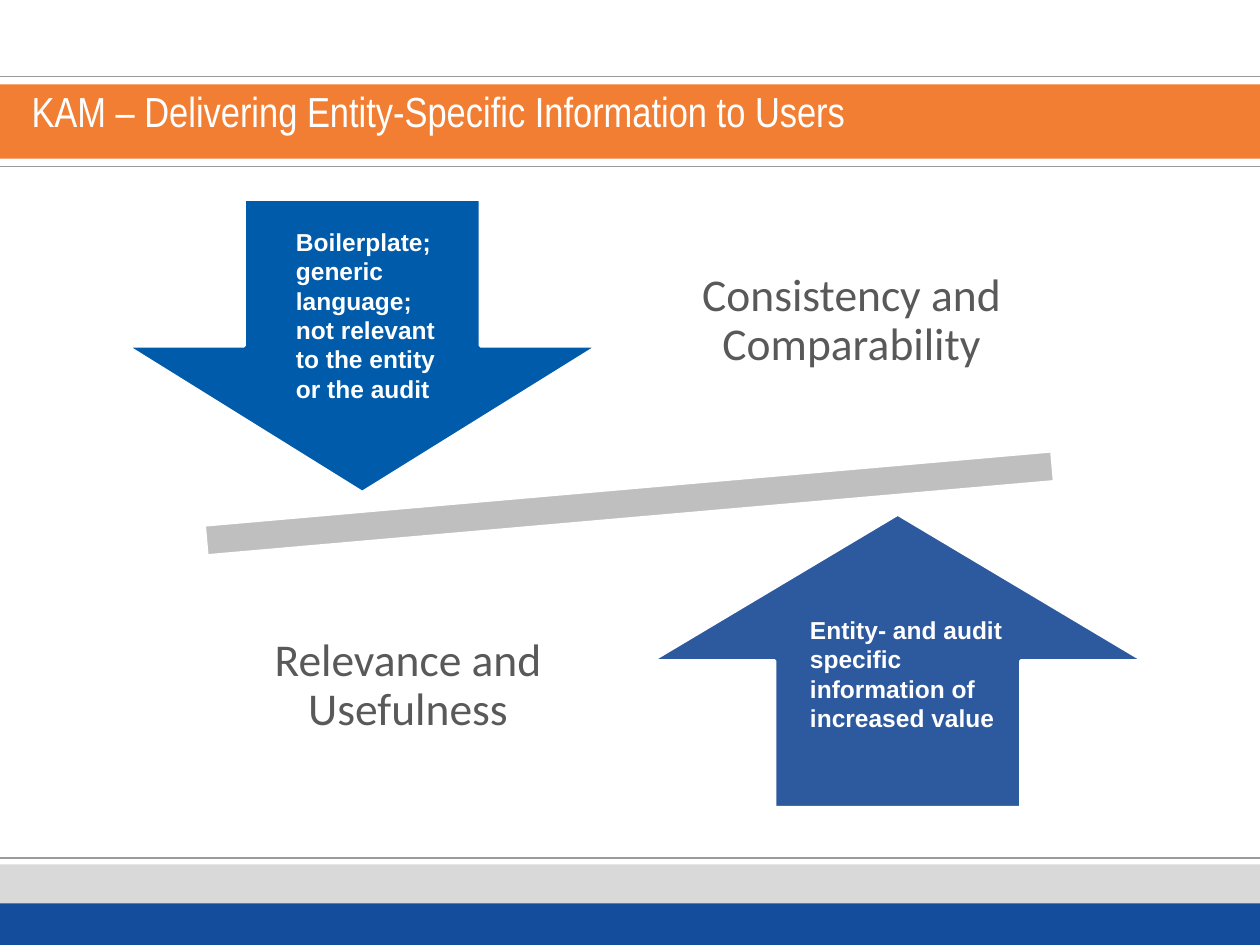
from pptx import Presentation
from pptx import util as u
from pptx.dml.color import RGBColor
from pptx.enum import shapes, text
from lxml import etree

WIDTH, HEIGHT = 10, 7.5
KIND = shapes.MSO_SHAPE
WHITE, LABEL_GREY, RULE_GREY = "FFFFFF", "595959", "999B9D"

bands = [(6.86, 0.64, "D9D9D9"), (0.67, 0.59, "F17E32"), (7.17, 0.33, "134D9C")]
rules = [0.61, 1.32, 6.81]
title = "KAM – Delivering Entity-Specific Information to Users"
balance = [
    (KIND.MATH_MINUS, (0.4, 3.47, 9.19, 1.05), "BFBFBF", 355),
    (KIND.DOWN_ARROW, (1, 1.58, 3.75, 2.33), "005BAA", 0),
    (KIND.UP_ARROW, (5.17, 4.08, 3.91, 2.33), "2D599E", 0),
]
qualities = [
    ("Consistency and Comparability", (5.28, 1.5, 2.96, 2.1)),
    ("Relevance and Usefulness", (1.76, 4.4, 2.96, 2.1)),
]
arrow_notes = [
    (["Boilerplate; generic language;", "not relevant to the entity or the audit"],
     (2.25, 1.75, 1.42, 1.51)),
    (["Entity- and audit specific information of increased value"],
     (6.33, 4.83, 1.75, 1.04)),
]

deck = Presentation()
deck.slide_width, deck.slide_height = u.Inches(WIDTH), u.Inches(HEIGHT)
slide = deck.slides.add_slide(deck.slide_layouts[6])


def color(value):
    return RGBColor.from_string(value)


def inches(place):
    return [u.Inches(length) for length in place]


def add_figure(kind, place, fill, outline=None, rotation=0):
    figure = slide.shapes.add_shape(kind, *inches(place))
    figure.shadow.inherit = False
    figure.rotation = rotation
    figure.fill.solid()
    figure.fill.fore_color.rgb = color(fill)
    if outline:
        figure.line.color.rgb = color(outline)
        figure.line.width = u.Pt(2)
    else:
        figure.line.fill.background()


def add_rule(top):
    rule = slide.shapes.add_connector(
        shapes.MSO_CONNECTOR.STRAIGHT, *inches((0, top, WIDTH, top)))
    rule.line.color.rgb = color(RULE_GREY)
    rule.line.width = u.Pt(0.75)
    etree.SubElement(
        rule._element.spPr,
        "{http://schemas.openxmlformats.org/drawingml/2006/main}effectLst")


def add_text(paragraphs, place, size, font, ink=WHITE, bold=False, insets=(0.1, 0.05),
             anchor=text.MSO_ANCHOR.TOP, align=text.PP_ALIGN.LEFT, spacing=None):
    frame = slide.shapes.add_textbox(*inches(place)).text_frame
    frame.word_wrap = True
    frame.vertical_anchor = anchor
    frame.margin_left = frame.margin_right = u.Inches(insets[0])
    frame.margin_top = frame.margin_bottom = u.Inches(insets[1])
    frame.text = "\n".join(paragraphs)
    for paragraph in frame.paragraphs:
        paragraph.alignment = align
        paragraph.line_spacing = spacing
        paragraph.font.size = u.Pt(size)
        paragraph.font.name = font
        paragraph.font.bold = bold
        paragraph.font.color.rgb = color(ink)


for top, height, fill in bands:
    add_figure(KIND.RECTANGLE, (0, top, WIDTH, height), fill)
for top in rules:
    add_rule(top)
add_text([title], (0.25, 0.59, 8.58, 0.58), 24, "Arial Narrow",
         insets=(0, 0), anchor=text.MSO_ANCHOR.MIDDLE)
for kind, place, fill, rotation in balance:
    add_figure(kind, place, fill, WHITE, rotation)
for quality, place in qualities:
    add_text([quality], place, 26, "Calibri", LABEL_GREY, insets=(0.2, 0.2),
             anchor=text.MSO_ANCHOR.MIDDLE, align=text.PP_ALIGN.CENTER, spacing=0.9)
for note, place in arrow_notes:
    add_text(note, place, 14, "Arial", bold=True)

deck.save("out.pptx")
